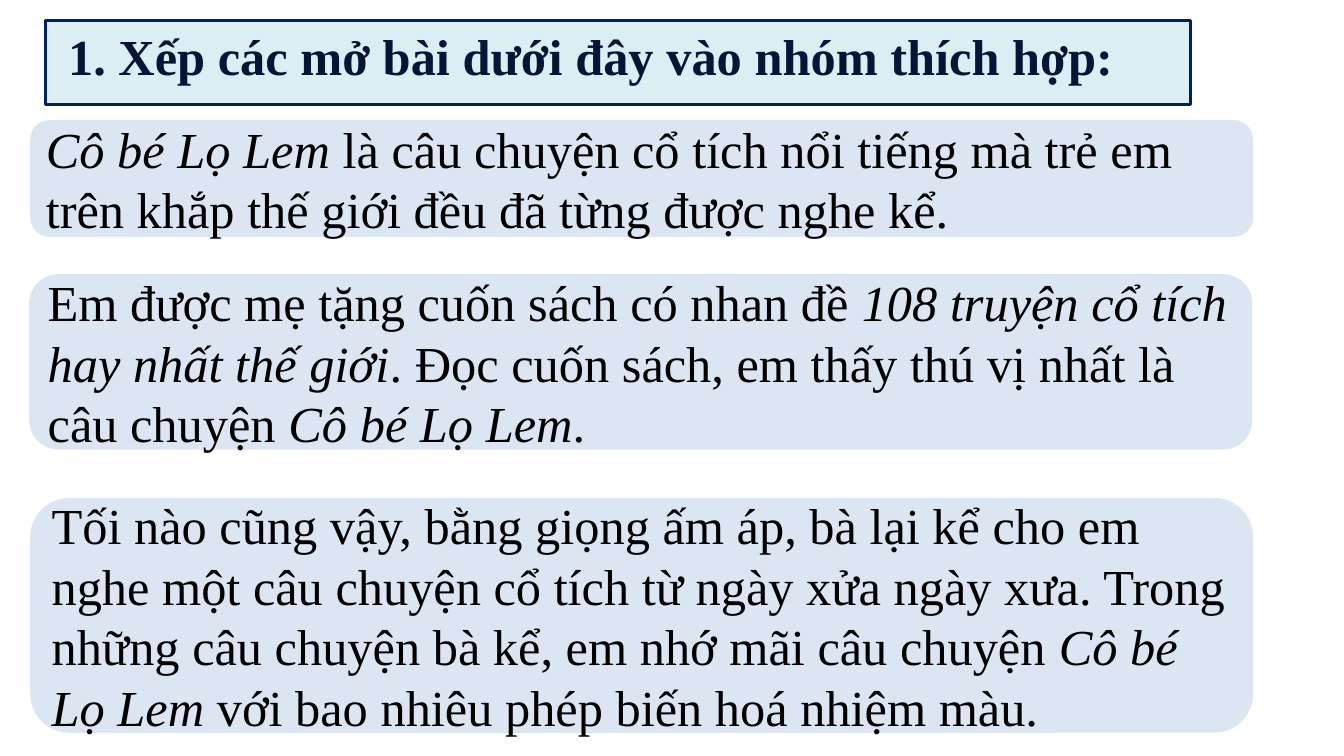
from dataclasses import dataclass

from pptx import Presentation
from pptx.dml.color import RGBColor
from pptx.enum.shapes import MSO_SHAPE
from pptx.enum.text import MSO_ANCHOR, MSO_AUTO_SIZE, PP_ALIGN
from pptx.util import Inches, Pt

FONT = "Times New Roman"
TEXT_SIZE = 36
CARD_WIDTH = 12.13


@dataclass(frozen=True)
class Piece:
    text: str
    italic: bool = False


@dataclass(frozen=True)
class Card:
    left: float
    top: float
    height: float
    pieces: tuple[Piece, ...]


CARDS = (
    Card(0.3, 1.19, 1.16, (
        Piece("Cô bé Lọ Lem ", italic=True),
        Piece("là câu chuyện cổ tích nổi tiếng mà trẻ em trên khắp thế giới "
              "đều đã từng được nghe kể."),
    )),
    Card(0.29, 2.72, 1.74, (
        Piece("Em được mẹ tặng cuốn sách có nhan đề "),
        Piece("108 truyện cổ tích hay nhất thế giới", italic=True),
        Piece(". Đọc cuốn sách, em thấy thú vị nhất là câu chuyện "),
        Piece("Cô bé Lọ Lem", italic=True),
        Piece("."),
    )),
    Card(0.3, 4.94, 2.33, (
        Piece("Tối nào cũng vậy, bằng giọng ấm áp, bà lại kể cho em nghe một "
              "câu chuyện cổ tích từ ngày xửa ngày xưa. Trong những câu chuyện "
              "bà kể, em nhớ mãi câu chuyện "),
        Piece("Cô bé Lọ Lem ", italic=True),
        Piece("với bao nhiêu phép biến hoá nhiệm màu."),
    )),
)


def color(value: str) -> RGBColor:
    return RGBColor.from_string(value)


def fill_shape(shape, value: str) -> None:
    shape.fill.solid()
    shape.fill.fore_color.rgb = color(value)


def add_text(para, text: str, *, ink: str = "000000",
             bold: bool = False, italic: bool = False) -> None:
    span = para.add_run()
    span.text = text
    span.font.name = FONT
    span.font.size = Pt(TEXT_SIZE)
    span.font.bold = bold
    span.font.italic = italic
    span.font.color.rgb = color(ink)


def draw_title(page) -> None:
    title = page.shapes.title
    title.left, title.top = Inches(0.45), Inches(0.2)
    title.width, title.height = Inches(11.36), Inches(0.71)
    fill_shape(title, "DBEEF4")
    title.line.color.rgb = color("002060")
    title.line.width = Pt(2)
    frame = title.text_frame
    frame.word_wrap = True
    frame.auto_size = MSO_AUTO_SIZE.SHAPE_TO_FIT_TEXT
    frame.vertical_anchor = MSO_ANCHOR.TOP
    para = frame.paragraphs[0]
    para.alignment = PP_ALIGN.JUSTIFY
    add_text(para, " 1. Xếp các mở bài dưới đây vào nhóm thích hợp:",
             ink="041636", bold=True)


def draw_card(page, card: Card) -> None:
    box = page.shapes.add_shape(
        MSO_SHAPE.ROUNDED_RECTANGLE, Inches(card.left), Inches(card.top),
        Inches(CARD_WIDTH), Inches(card.height))
    box.shadow.inherit = False
    fill_shape(box, "DCE6F2")
    box.line.fill.background()
    frame = box.text_frame
    frame.word_wrap = True
    frame.vertical_anchor = MSO_ANCHOR.MIDDLE
    para = frame.paragraphs[0]
    para.alignment = PP_ALIGN.LEFT
    for piece in card.pieces:
        add_text(para, piece.text, italic=piece.italic)


def main() -> None:
    deck = Presentation()
    deck.slide_width, deck.slide_height = Inches(13.33), Inches(7.5)
    page = deck.slides.add_slide(deck.slide_layouts.get_by_name("Title Only"))
    draw_title(page)
    for card in CARDS:
        draw_card(page, card)
    deck.save("out.pptx")


if __name__ == "__main__":
    main()
